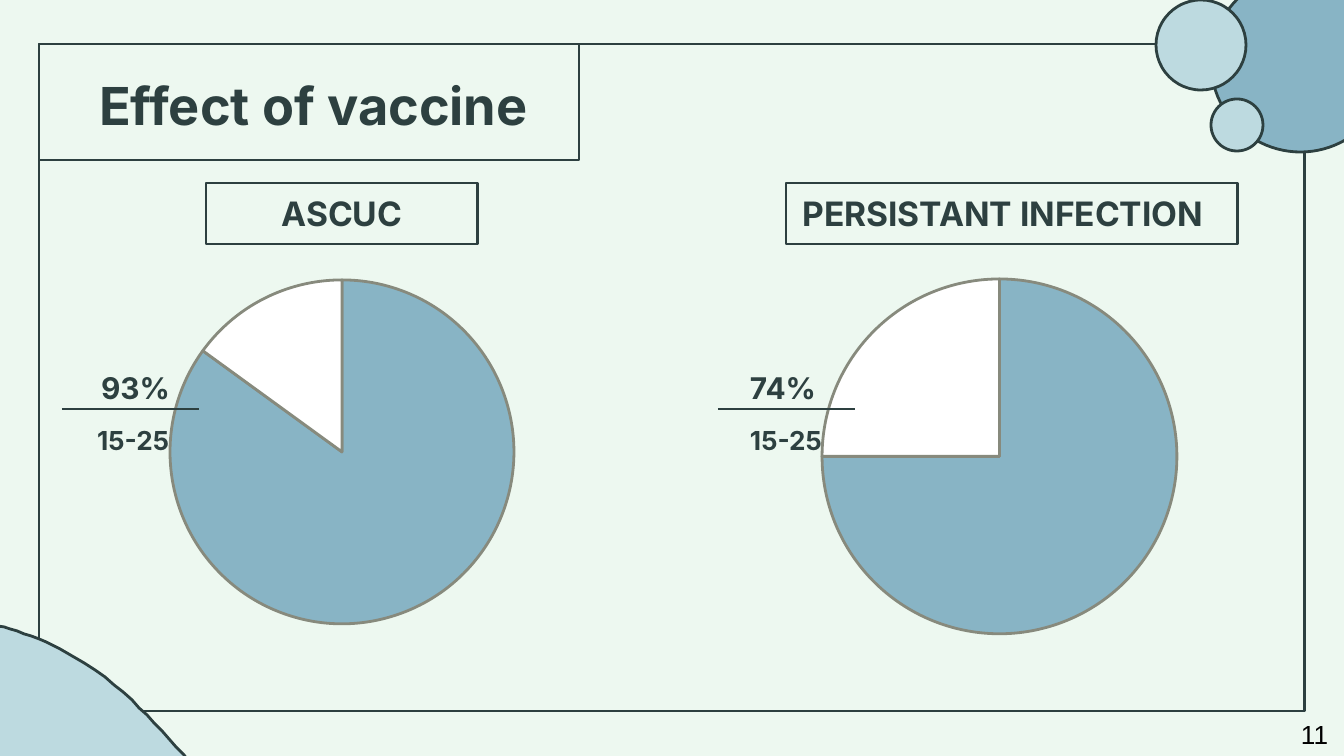
from dataclasses import dataclass
from typing import Any

from lxml.etree import SubElement
from pptx import Presentation
from pptx.chart.data import CategoryChartData
from pptx.dml.color import RGBColor
from pptx.enum.chart import XL_CHART_TYPE
from pptx.enum.shapes import MSO_CONNECTOR, MSO_SHAPE
from pptx.enum.text import MSO_ANCHOR, PP_ALIGN
from pptx.oxml import parse_xml
from pptx.oxml.ns import nsdecls, qn
from pptx.util import Emu, Pt

SCALE = 9144000 / 1344
COLOURS = {
    "paper": "EDF8F0",
    "ink": "2D4040",
    "sky": "BDDAE0",
    "blue": "88B4C5",
    "white": "FFFFFF",
    "grey": "878A7D",
    "black": "000000",
}


def px(length):
    return Emu(round(length * SCALE))


def colour(name):
    return RGBColor.from_string(COLOURS[name])


def bezier(start, first, second, end, steps=24):
    for step in range(1, steps + 1):
        t = step / steps
        yield tuple(
            (1 - t) ** 3 * a + 3 * (1 - t) ** 2 * t * b + 3 * (1 - t) * t**2 * c + t**3 * d
            for a, b, c, d in zip(start, first, second, end)
        )


@dataclass
class Sketch:
    """Draws styled elements on the current slide."""

    page: Any
    font: str = "Inter"
    line_width: float = 1.5

    def paint(self, shape, fill=None):
        if fill:
            shape.fill.solid()
            shape.fill.fore_color.rgb = colour(fill)
        else:
            shape.fill.background()
        shape.line.color.rgb = colour("ink")
        shape.line.width = Pt(self.line_width)

    def shape(self, kind, left, top, width, height, fill=None):
        shape = self.page.shapes.add_shape(kind, px(left), px(top), px(width), px(height))
        shape.shadow.inherit = False
        self.paint(shape, fill)
        return shape

    def circle(self, left, top, size, fill):
        return self.shape(MSO_SHAPE.OVAL, left, top, size, size, fill)

    def outline(self, points, fill):
        builder = self.page.shapes.build_freeform(*points[0], scale=SCALE)
        builder.add_line_segments(points[1:], close=True)
        shape = builder.convert_to_shape()
        shape.shadow.inherit = False
        self.paint(shape, fill)

    def add_words(self, box, text, size, align=PP_ALIGN.LEFT, insets=(13, 13, 13, 13),
                  wrap=True, bold=True, font=None, ink="ink"):
        frame = box.text_frame
        frame.word_wrap = wrap
        frame.vertical_anchor = MSO_ANCHOR.MIDDLE
        frame.margin_left, frame.margin_top, frame.margin_right, frame.margin_bottom = map(px, insets)
        para = frame.paragraphs[0]
        para.alignment = align
        span = para.add_run()
        span.text = text
        span.font.name = font or self.font
        span.font.size = Pt(size)
        span.font.bold = bold
        span.font.color.rgb = colour(ink)

    def title(self, text, left, top, width, height):
        box = self.page.shapes.title
        box.left, box.top, box.width, box.height = map(px, (left, top, width, height))
        self.paint(box, "paper")
        self.add_words(box, text, 28, insets=(60, 13, 13, 7))

    def label(self, text, left, top, width, height, insets):
        box = self.shape(MSO_SHAPE.RECTANGLE, left, top, width, height)
        self.add_words(box, text, 18, PP_ALIGN.CENTER, insets)

    def text(self, text, left, top, width, height, size, **style):
        box = self.page.shapes.add_textbox(px(left), px(top), px(width), px(height))
        self.add_words(box, text, size, **style)

    def rule(self, left, top, width):
        line = self.page.shapes.add_connector(
            MSO_CONNECTOR.STRAIGHT, px(left), px(top), px(left + width), px(top))
        line.line.color.rgb = colour("ink")
        line.line.width = Pt(0.75)
        SubElement(line._element.spPr, qn("a:effectLst"))

    def pie(self, values, frame, disc):
        data = CategoryChartData()
        data.categories = ["1", "2"]
        data.add_series("Series 1", values)
        chart = self.page.shapes.add_chart(XL_CHART_TYPE.PIE, *map(px, frame), data).chart
        chart.has_legend = False
        chart.has_title = False
        chart.font.name = "Arial"
        chart.font.size = Pt(10)
        chart.font.color.rgb = colour("ink")
        plot = chart.plots[0]
        plot.vary_by_categories = True
        for index, fill in enumerate(("blue", "white")):
            style = plot.series[0].points[index].format
            style.fill.solid()
            style.fill.fore_color.rgb = colour(fill)
            style.line.color.rgb = colour("grey")
            style.line.width = Pt(self.line_width)
        self.place_disc(chart, frame, disc)

    def place_disc(self, chart, frame, disc):
        left, top, width, height = frame
        x, y, size = disc
        parts = {"x": (x - left) / width, "y": (y - top) / height,
                 "w": size / width, "h": size / height}
        area = chart._chartSpace.chart.plotArea
        for old in area.findall(qn("c:layout")):
            area.remove(old)
        values = "".join(f'<c:{name} val="{part:.4f}"/>' for name, part in parts.items())
        area.insert(0, parse_xml(
            f'<c:layout {nsdecls("c")}><c:manualLayout><c:layoutTarget val="inner"/>'
            f'<c:xMode val="edge"/><c:yMode val="edge"/>{values}</c:manualLayout></c:layout>'))


def main():
    deck = Presentation()
    deck.slide_width, deck.slide_height = px(1344), px(756)
    page = deck.slides.add_slide(deck.slide_layouts[5])
    page.background.fill.solid()
    page.background.fill.fore_color.rgb = colour("paper")
    sketch = Sketch(page)

    sketch.shape(MSO_SHAPE.RECTANGLE, 39, 44, 1266, 667)
    crest = (46, 642)
    wave = [(-95, 828), (273, 828)]
    wave += bezier(wave[-1], (165, 765), (160, 695), crest)
    wave += bezier(crest, (-13, 616), (-63, 618), (-95, 626))
    sketch.outline(wave, "sky")
    for left, top, size, fill in (
        (1211, -27, 179, "blue"), (1156, 0, 90, "sky"), (1211, 99, 52, "sky"),
    ):
        sketch.circle(left, top, size, fill)

    sketch.title("Effect of vaccine", 39, 44, 540, 116)
    sketch.label("ASCUC", 206, 183, 272, 61, (13, 13, 13, 13))
    sketch.label("PERSISTANT INFECTION", 786, 183, 452, 61, (10, 13, 28, 13))

    sketch.pie((85, 15), (52, 262, 581, 380), (170, 280, 344))
    sketch.pie((75, 25), (720, 261, 558, 392), (822, 279, 355))
    for share, rule_left, share_left, age_left in (
        ("93%", 62, 88, 84), ("74%", 718, 737, 737),
    ):
        sketch.rule(rule_left, 409, 137)
        sketch.text(share, share_left, 364, 137, 47, 16)
        sketch.text("15-25", age_left, 417, 137, 47, 14)

    sketch.text("11", 1288, 711, 56, 46, 14, insets=(13, 7, 13, 7),
                wrap=False, bold=False, font="Arial", ink="black")
    deck.save("out.pptx")


if __name__ == "__main__":
    main()
